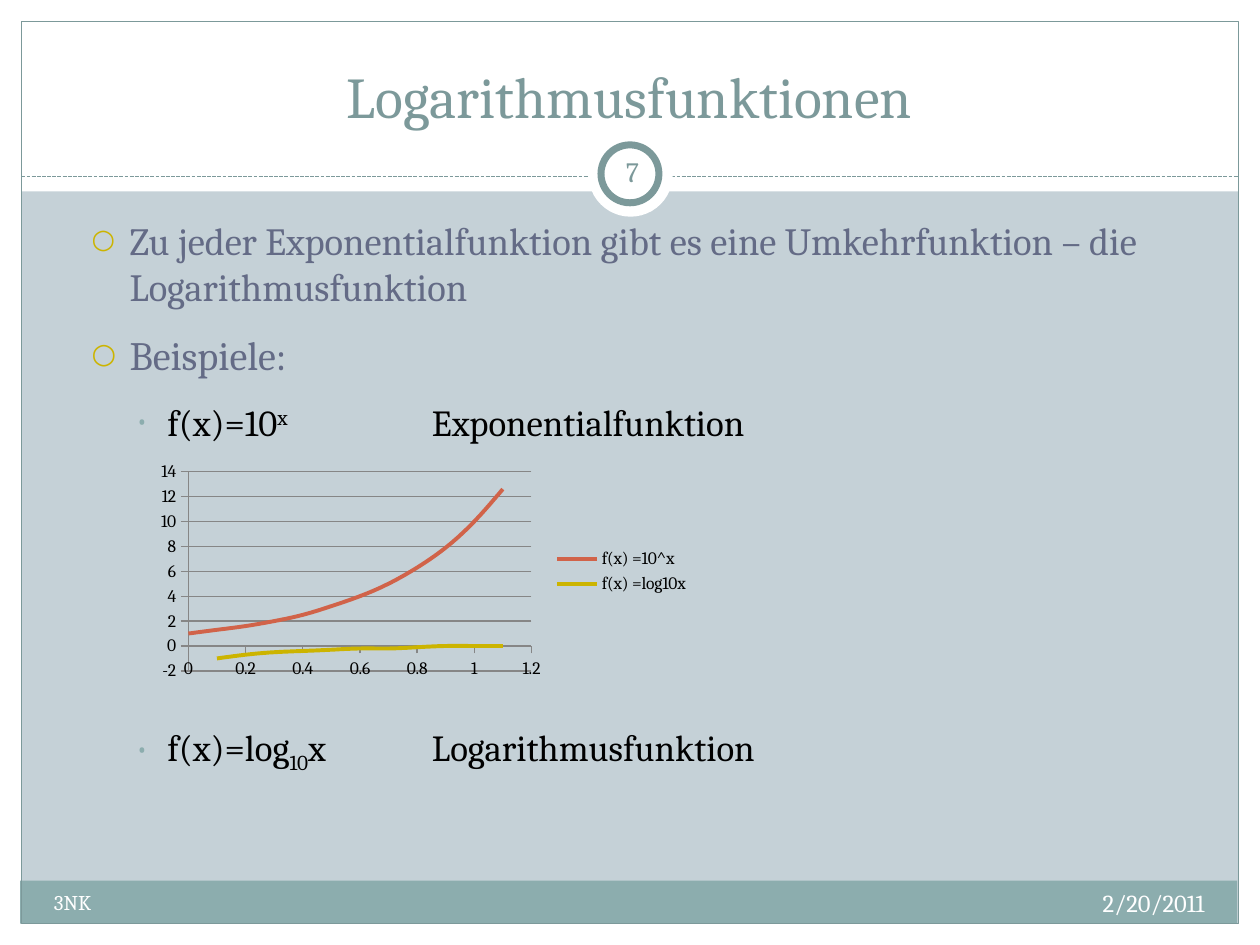
import math
from lxml import etree
from pptx import Presentation, util as u
from pptx.chart import data
from pptx.dml.color import RGBColor
from pptx.enum import chart as ch, dml, shapes, text
from pptx.oxml import ns

WHITE, TEAL, BAND, GOLD, SLATE, BLACK = "FFFFFF", "7C999A", "8CADAE", "CCB400", "646B86", "000000"
FONT = "Cambria"
color = RGBColor.from_string

prs = Presentation()
prs.slide_width, prs.slide_height = u.Inches(10), u.Inches(7.5)
slide = prs.slides.add_slide(prs.slide_layouts[6])
slide.background.fill.solid()
slide.background.fill.fore_color.rgb = color("C5D1D7")


def style(run, size, hue, baseline=0):
    for name, value in {"name": FONT, "size": u.Pt(size)}.items():
        setattr(run.font, name, value)
    run.font.color.rgb = color(hue)
    if baseline:
        run.font._element.set("baseline", str(baseline * 1000))


def textbox(box, anchor=text.MSO_ANCHOR.TOP, inset=None):
    """Add a wrapping text box and return its text frame."""
    frame = slide.shapes.add_textbox(*map(u.Inches, box)).text_frame
    frame.word_wrap, frame.vertical_anchor = True, anchor
    if inset is not None:
        for side in ("left", "right", "top", "bottom"):
            setattr(frame, f"margin_{side}", u.Inches(inset))
    return frame


# Frame: white margins, footer band, outline, dashed rule and number badge
RECT, OVAL = shapes.MSO_SHAPE.RECTANGLE, shapes.MSO_SHAPE.OVAL
edge = 0.17
inner_w, inner_h = 10 - 2 * edge, 7.5 - 2 * edge
rule_y = 1.4
for kind, box, fill, line_width in [
    (RECT, (0, 7.5 - edge, 10, edge), WHITE, 0),
    (RECT, (0, 0, 10, 1.52), WHITE, 0),
    (RECT, (0, 0, edge, 7.5), WHITE, 0),
    (RECT, (10 - edge, 0, edge, 7.5), WHITE, 0),
    (RECT, (0.16, 6.99, inner_w, 0.34), BAND, 0),
    (RECT, (edge, edge, inner_w, inner_h), None, 0.75),
    ("rule", (edge, rule_y, 10 - edge, rule_y), None, 0.75),
    (OVAL, (4.67, 1.05, 0.67, 0.67), WHITE, 0),
    (OVAL, (4.77, 1.15, 0.46, 0.46), WHITE, 4),
]:
    if kind == "rule":
        part = slide.shapes.add_connector(shapes.MSO_CONNECTOR.STRAIGHT, *map(u.Inches, box))
        part.line.dash_style = dml.MSO_LINE.SQUARE_DOT
        etree.SubElement(part._element.spPr, ns.qn("a:effectLst"))
    else:
        part = slide.shapes.add_shape(kind, *map(u.Inches, box))
        part.shadow.inherit = False
        if fill:
            part.fill.solid()
            part.fill.fore_color.rgb = color(fill)
        else:
            part.fill.background()
    if line_width:
        part.line.width = u.Pt(line_width)
        part.line.color.rgb = color(TEAL)
    else:
        part.line.fill.background()

# Title, date, class and slide number
ALIGN, ANCHOR = text.PP_ALIGN, text.MSO_ANCHOR
for words, box, size, hue, align, anchor, inset in [
    ("Logarithmusfunktionen", (0.33, 0.25, 9.33, 0.83), 33, TEAL, ALIGN.CENTER, ANCHOR.BOTTOM, None),
    ("2/20/2011", (6.33, 7, 3.33, 0.4), 14, WHITE, ALIGN.RIGHT, ANCHOR.TOP, None),
    ("3NK", (0.33, 7.01, 3.92, 0.4), 12, WHITE, ALIGN.LEFT, ANCHOR.TOP, None),
    ("7", (4.77, 1.12, 0.5, 0.48), 16, TEAL, ALIGN.CENTER, ANCHOR.MIDDLE, 0.05),
]:
    label = textbox(box, anchor, inset).paragraphs[0]
    label.alignment = align
    style(label.add_run(), size, hue)
    label.runs[0].text = words

# Bullets: the last one leaves room above it for the chart
levels = [
    {"indent": 0.6, "hang": 0.3, "bullet": "○", "bullet_hue": GOLD, "share": 70, "hue": SLATE},
    {"indent": 0.9, "hang": 0.25, "bullet": "•", "bullet_hue": BAND, "share": 75, "hue": BLACK},
]
chart_gap = 154.5
body = textbox((0.33, 1.67, 9.3, 5))
for index, (level, size, before, pieces) in enumerate([
    (0, 22, 6, [("Zu jeder Exponentialfunktion gibt es eine Umkehrfunktion – die Logarithmusfunktion", 0)]),
    (0, 23, 6, [("Beispiele:", 0)]),
    (1, 21, 6, [("f(x)=10", 0), ("x", 30), ("\t\tExponentialfunktion", 0)]),
    (1, 21, chart_gap, [("f(x)=log", 0), ("10", -25), ("x\tLogarithmusfunktion", 0)]),
]):
    item = body.add_paragraph() if index else body.paragraphs[0]
    look = levels[level]
    item.level = level
    item.space_before, item.space_after = u.Pt(before), u.Pt(6)
    props = item._p.get_or_add_pPr()
    props.set("marL", str(u.Inches(look["indent"])))
    props.set("indent", str(-u.Inches(look["hang"])))
    bullet_hue = etree.SubElement(props, ns.qn("a:buClr"))
    etree.SubElement(bullet_hue, ns.qn("a:srgbClr"), val=look["bullet_hue"])
    etree.SubElement(props, ns.qn("a:buSzPct"), val=str(look["share"] * 1000))
    etree.SubElement(props, ns.qn("a:buFont"), typeface=FONT)
    etree.SubElement(props, ns.qn("a:buChar"), char=look["bullet"])
    if level:
        stops = etree.SubElement(props, ns.qn("a:tabLst"))
        for inch in (2, 3):
            etree.SubElement(stops, ns.qn("a:tab"), pos=str(u.Inches(inch)), algn="l")
    for words, baseline in pieces:
        run = item.add_run()
        run.text = words
        style(run, size, look["hue"], baseline)

# Chart of the function and its inverse; the logarithm has no value at 0
curves = data.XyChartData()
for name, function in [
    ("f(x) =10^x", lambda x: 10 ** x),
    ("f(x) =log10x", lambda x: math.log10(x) if x else None),
]:
    curve = curves.add_series(name)
    for x in [i / 10 for i in range(12)]:
        y = function(x)
        curve.add_data_point(x, None if y is None else round(y, 1) + 0.0)
chart = slide.shapes.add_chart(ch.XL_CHART_TYPE.XY_SCATTER_SMOOTH_NO_MARKERS,
                               *map(u.Inches, (1.19, 3.63, 4.38, 1.81)), curves).chart
for name, value in {"name": FONT, "size": u.Pt(10)}.items():
    setattr(chart.font, name, value)
chart.font.color.rgb = color(BLACK)
chart.has_title = False
chart.has_legend = True
chart.legend.position = ch.XL_LEGEND_POSITION.RIGHT
chart.legend.include_in_layout = False
chart.plots[0].vary_by_categories = False
for series, hue in zip(chart.plots[0].series, ("D16349", GOLD)):
    series._element.find(ns.qn("c:smooth")).set("val", "1")
    for point in series._element.findall(f"{ns.qn('c:yVal')}//{ns.qn('c:pt')}"):
        if point.findtext(ns.qn("c:v")) in ("None", "", None):
            point.getparent().remove(point)
    series.marker.style = ch.XL_MARKER_STYLE.NONE
    series.format.line.width = u.Pt(2.25)
    series.format.line.color.rgb = color(hue)
for axis, low, high, unit in [(chart.category_axis, 0, 1.2, 0.2), (chart.value_axis, -2, 14, 2)]:
    for name, value in {
        "minimum_scale": low, "maximum_scale": high, "major_unit": unit,
        "major_tick_mark": ch.XL_TICK_MARK.OUTSIDE, "minor_tick_mark": ch.XL_TICK_MARK.NONE,
        "tick_label_position": ch.XL_TICK_LABEL_POSITION.NEXT_TO_AXIS,
        "has_major_gridlines": axis is chart.value_axis,
    }.items():
        setattr(axis, name, value)
    axis.tick_labels.number_format = "General"
    axis.tick_labels.number_format_is_linked = False
    axis.format.line.color.rgb = color("868686")
chart.value_axis.major_gridlines.format.line.color.rgb = color("868686")

prs.save("out.pptx")
